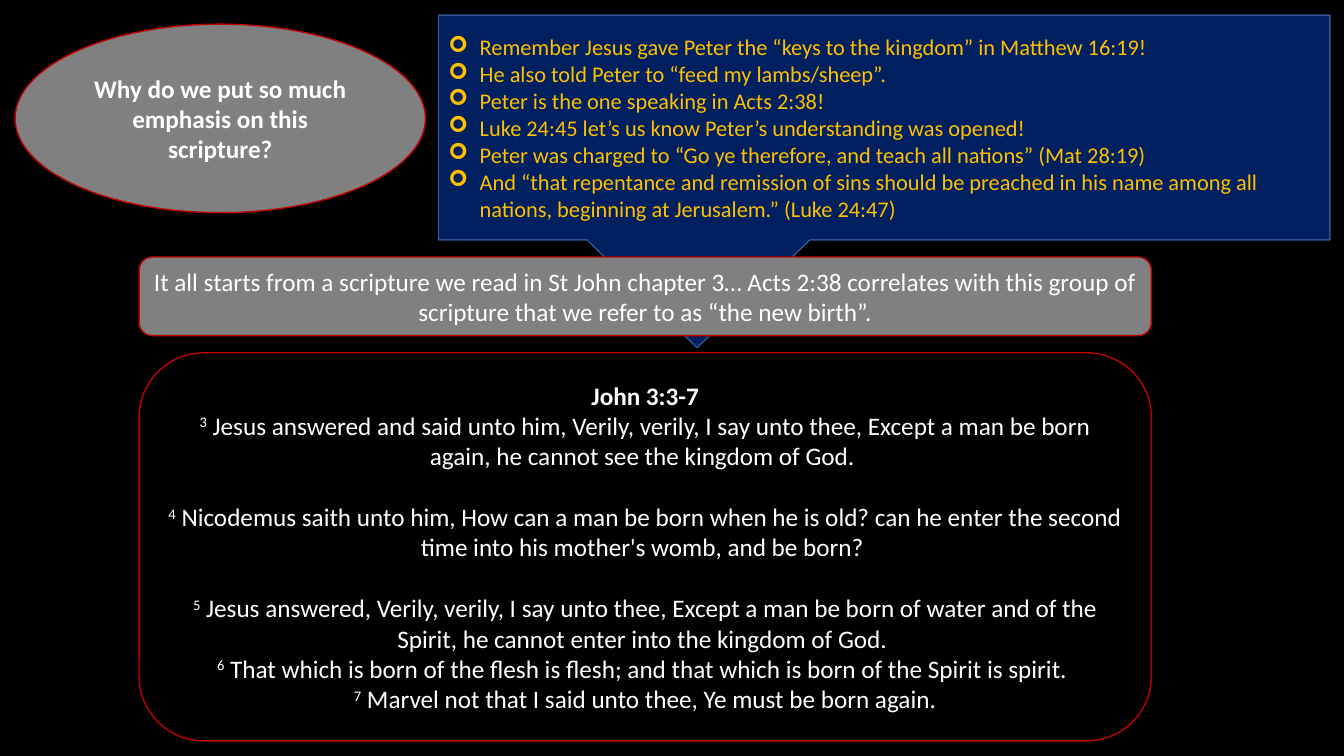
from dataclasses import dataclass

from lxml import etree
from pptx import Presentation
from pptx.dml.color import RGBColor
from pptx.enum.shapes import MSO_SHAPE
from pptx.enum.text import MSO_ANCHOR, PP_ALIGN
from pptx.oxml.ns import qn
from pptx.util import Inches, Pt

CALLOUT = MSO_SHAPE.RECTANGULAR_CALLOUT
OVAL = MSO_SHAPE.OVAL
ROUNDED = MSO_SHAPE.ROUNDED_RECTANGLE
MIDDLE = MSO_ANCHOR.MIDDLE
LEFT, CENTER = PP_ALIGN.LEFT, PP_ALIGN.CENTER

BLACK, WHITE, GRAY = "000000", "FFFFFF", "808080"
RED, NAVY, BLUE, GOLD = "C00000", "002060", "325491", "FFC000"
HANGING = Inches(0.31)
VERSE_GAP = Pt(22)


@dataclass
class Para:
    text: str
    heading: str = ""
    verse: str = ""
    before: int = 0


@dataclass
class Box:
    kind: int
    at: tuple[float, float, float, float]
    fill: str
    line: str
    paras: list[Para]
    size: int = 18
    color: str = WHITE
    bold: bool = False
    bullet: str = ""
    adjust: tuple[float, ...] = ()


BOXES = [
    Box(CALLOUT, (4.35, 0.15, 8.84, 2.23), NAVY, BLUE, [
        Para("Remember Jesus gave Peter the “keys to the kingdom” in Matthew 16:19!"),
        Para("He also told Peter to “feed my lambs/sheep”."),
        Para("Peter is the one speaking in Acts 2:38!"),
        Para("Luke 24:45 let’s us know Peter’s understanding was opened!"),
        Para("Peter was charged to “Go ye therefore, and teach all nations” (Mat 28:19)"),
        Para("And “that repentance and remission of sins should be preached in his name "
             "among all nations, beginning at Jerusalem.” (Luke 24:47)"),
    ], size=16, color=GOLD, bullet="➢", adjust=(-0.21, 0.98)),
    Box(OVAL, (0.15, 0.24, 4.07, 1.87), GRAY, RED, [
        Para("Why do we put so much emphasis on this scripture?"),
    ], bold=True),
    Box(ROUNDED, (1.38, 2.55, 10.04, 0.78), GRAY, RED, [
        Para("It all starts from a scripture we read in St John chapter 3… Acts 2:38 "
             "correlates with this group of scripture that we refer to as “the new birth”."),
    ]),
    Box(ROUNDED, (1.38, 3.5, 10.04, 3.85), BLACK, RED, [
        Para(" Jesus answered and said unto him, Verily, verily, I say unto thee, "
             "Except a man be born again, he cannot see the kingdom of God. ",
             heading="John 3:3-7", verse="3"),
        Para(" Nicodemus saith unto him, How can a man be born when he is old? can he "
             "enter the second time into his mother's womb, and be born? ",
             verse="4", before=VERSE_GAP),
        Para(" Jesus answered, Verily, verily, I say unto thee, Except a man be born of "
             "water and of the Spirit, he cannot enter into the kingdom of God. ",
             verse="5", before=VERSE_GAP),
        Para(" That which is born of the flesh is flesh; and that which is born of the "
             "Spirit is spirit. ", verse="6"),
        Para(" Marvel not that I said unto thee, Ye must be born again.", verse="7"),
    ]),
]


def rgb(value: str) -> RGBColor:
    return RGBColor.from_string(value)


def add_run(p, text: str, box: Box, bold: bool = False, raised: bool = False) -> None:
    r = p.add_run()
    r.text = text
    for name, value in {"name": "Calibri", "size": Pt(box.size), "bold": bold}.items():
        setattr(r.font, name, value)
    r.font.color.rgb = rgb(box.color)
    if raised:
        r._r.get_or_add_rPr().set("baseline", "30000")


def add_bullet(p, char: str) -> None:
    pPr = p._p.get_or_add_pPr()
    pPr.set("marL", str(HANGING))
    pPr.set("indent", str(-HANGING))
    etree.SubElement(pPr, qn("a:buFont")).set("typeface", "Wingdings")
    etree.SubElement(pPr, qn("a:buChar")).set("char", char)


def add_para(p, para: Para, box: Box) -> None:
    p.alignment = LEFT if box.bullet else CENTER
    if para.before:
        p.space_before = para.before
    if box.bullet:
        add_bullet(p, box.bullet)
    if para.heading:
        add_run(p, para.heading, box, bold=True)
        p.add_line_break()
    if para.verse:
        add_run(p, para.verse, box, raised=True)
    add_run(p, para.text, box, bold=box.bold)


def add_box(slide, box: Box) -> None:
    sp = slide.shapes.add_shape(box.kind, *map(Inches, box.at))
    sp.shadow.inherit = False
    for i, value in enumerate(box.adjust):
        sp.adjustments[i] = value
    sp.fill.solid()
    sp.fill.fore_color.rgb = rgb(box.fill)
    sp.line.color.rgb = rgb(box.line)
    sp.line.width = Pt(1)
    tf = sp.text_frame
    for name, value in {"word_wrap": True, "vertical_anchor": MIDDLE}.items():
        setattr(tf, name, value)
    for i, para in enumerate(box.paras):
        add_para(tf.add_paragraph() if i else tf.paragraphs[0], para, box)


def main() -> None:
    prs = Presentation()
    prs.slide_width, prs.slide_height = Inches(13.33), Inches(7.5)
    slide = prs.slides.add_slide(prs.slide_layouts[6])
    slide.background.fill.solid()
    slide.background.fill.fore_color.rgb = rgb(BLACK)
    for box in BOXES:
        add_box(slide, box)
    prs.save("out.pptx")


if __name__ == "__main__":
    main()
